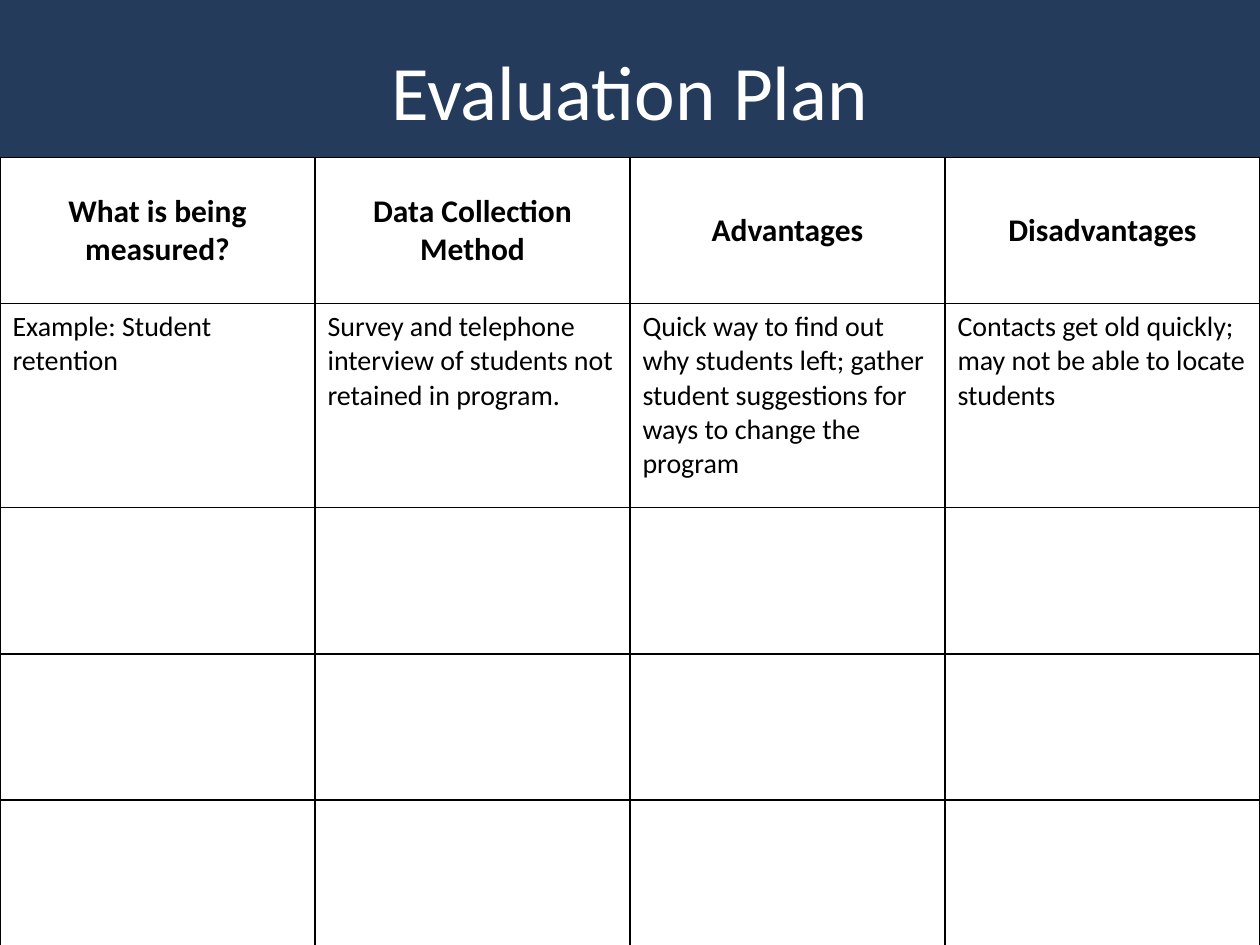
"""Build the Evaluation Plan slide."""
import lxml.etree
import pptx
import pptx.dml.color
import pptx.enum.shapes
import pptx.enum.text
import pptx.oxml.ns
import pptx.util

Inches, Pt = pptx.util.Inches, pptx.util.Pt
MIDDLE = pptx.enum.text.MSO_ANCHOR.MIDDLE
CENTER = pptx.enum.text.PP_ALIGN.CENTER

TITLE = "Evaluation Plan"
ROWS = [
    ["What is being measured?", "Data Collection Method", "Advantages", "Disadvantages"],
    [
        "Example: Student retention",
        "Survey and telephone interview of students not retained in program.",
        "Quick way to find out why students left; gather student suggestions "
        "for ways to change the program",
        "Contacts get old quickly; may not be able to locate students",
    ],
    [""] * 4,
    [""] * 4,
    [""] * 4,
]
ROW_HEIGHTS = [1.16, 1.62, 1.16, 1.16, 1.16]
WIDTH, HEIGHT, BAND_HEIGHT = 10, 7.5, 1.25
NAVY, WHITE, BLACK = "243B5B", "FFFFFF", "000000"


def rgb(value):
    return pptx.dml.color.RGBColor.from_string(value)


def fill(obj, color):
    obj.fill.solid()
    obj.fill.fore_color.rgb = rgb(color)


def style(p, size, color, bold=False):
    for r in p.runs:
        r.font.name = "Calibri"
        r.font.size = Pt(size)
        r.font.bold = bold
        r.font.color.rgb = rgb(color)


def add_borders(cell, color, width):
    qn = pptx.oxml.ns.qn
    props = cell._tc.get_or_add_tcPr()
    for i, side in enumerate(("lnL", "lnR", "lnT", "lnB")):
        ln = lxml.etree.Element(qn("a:" + side), w=str(Pt(width)))
        solid = lxml.etree.SubElement(ln, qn("a:solidFill"))
        lxml.etree.SubElement(solid, qn("a:srgbClr"), val=color)
        props.insert(i, ln)


def add_header(s):
    band = s.shapes.add_shape(
        pptx.enum.shapes.MSO_SHAPE.RECTANGLE, 0, 0, Inches(WIDTH), Inches(BAND_HEIGHT)
    )
    band.shadow.inherit = False
    fill(band, NAVY)
    band.line.fill.background()
    sp = s.shapes.add_textbox(Inches(0.75), Inches(0.25), Inches(8.5), Inches(0.92))
    tf = sp.text_frame
    tf.word_wrap = True
    tf.vertical_anchor = MIDDLE
    tf.text = TITLE
    p = tf.paragraphs[0]
    p.alignment = CENTER
    style(p, 44, WHITE)


def add_plan(s):
    table = s.shapes.add_table(
        len(ROWS), len(ROWS[0]), 0, Inches(BAND_HEIGHT),
        Inches(WIDTH), Inches(HEIGHT - BAND_HEIGHT),
    ).table
    for row, height in zip(table.rows, ROW_HEIGHTS):
        row.height = Inches(height)
    for i, texts in enumerate(ROWS):
        header = i == 0
        for j, text in enumerate(texts):
            cell = table.cell(i, j)
            fill(cell, WHITE)
            add_borders(cell, BLACK, 1)
            cell.text_frame.text = text
            p = cell.text_frame.paragraphs[0]
            if header:
                cell.vertical_anchor = MIDDLE
                p.alignment = CENTER
            style(p, 18 if header else 16, BLACK, header)


def main():
    prs = pptx.Presentation()
    prs.slide_width, prs.slide_height = Inches(WIDTH), Inches(HEIGHT)
    s = prs.slides.add_slide(prs.slide_layouts[6])
    add_header(s)
    add_plan(s)
    prs.save("out.pptx")


if __name__ == "__main__":
    main()
